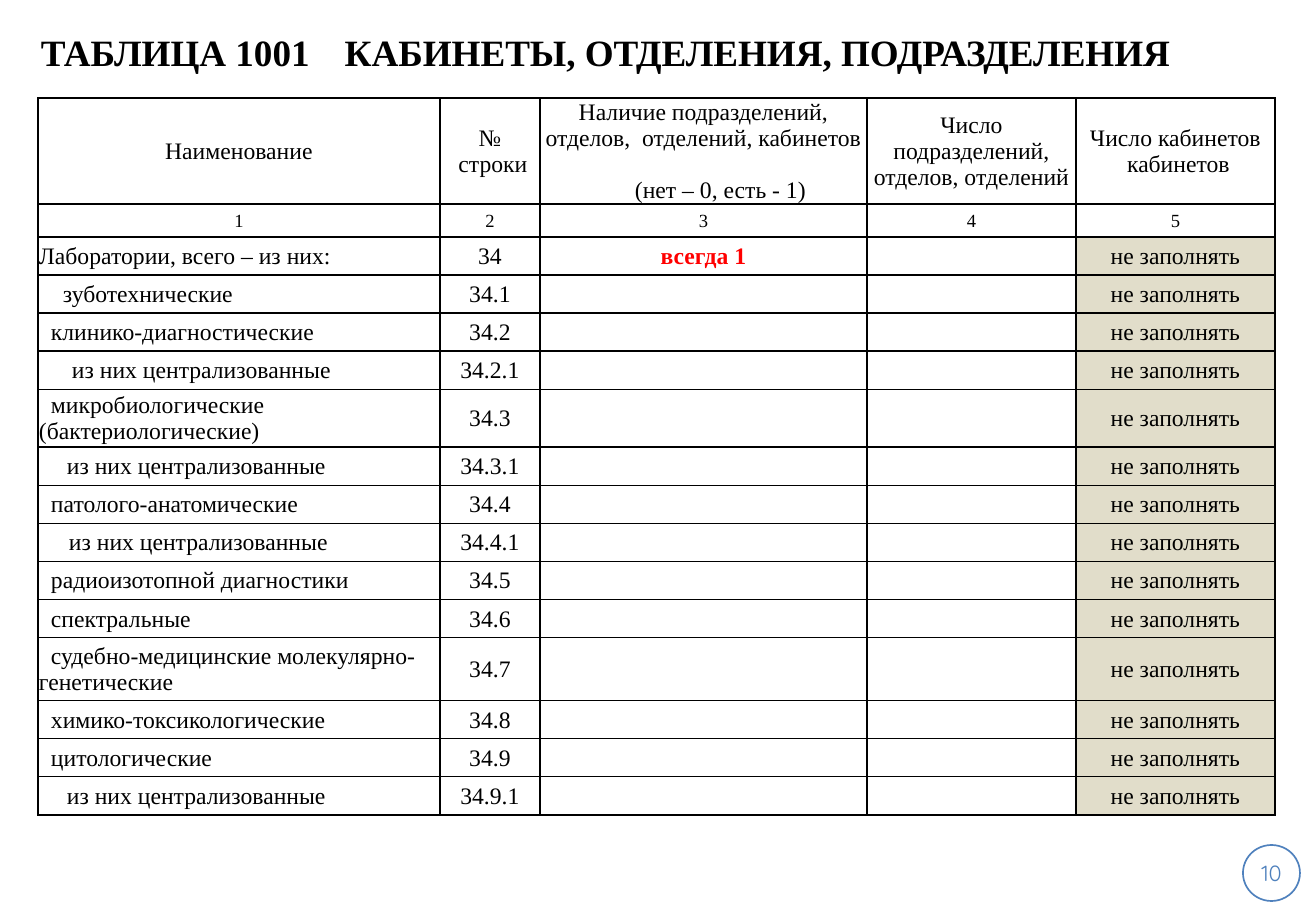
from lxml import etree
from pptx import Presentation
from pptx import util as u
from pptx.dml.color import RGBColor
from pptx.enum import shapes, text
from pptx.oxml import ns

BLACK = RGBColor(0x00, 0x00, 0x00)
RED = RGBColor(0xFF, 0x00, 0x00)
BLUE = RGBColor(0x4F, 0x81, 0xBD)
SAND = RGBColor(0xC4, 0xBD, 0x97)
SERIF, ROUND = "Times New Roman", "Quicksand"

TITLE = "ТАБЛИЦА 1001\tКАБИНЕТЫ, ОТДЕЛЕНИЯ, ПОДРАЗДЕЛЕНИЯ"
TITLE_TAB = 352
PAGE = "10"
HEADERS = [
    ("Наименование", {}),
    ("№\nстроки", {"shift": 6}),
    ("Наличие подразделений, отделов,  отделений, кабинетов\n(нет – 0, есть - 1)",
     {"shift": 34, "gap": 15.5}),
    ("Число подразделений, отделов, отделений", {}),
    ("Число кабинетов\nкабинетов", {"shift": 6}),
]
LABS = [
    ("Лаборатории, всего – из них:", 0, "34", "всегда 1"),
    ("зуботехнические", 24, "34.1", ""),
    ("клинико-диагностические", 12, "34.2", ""),
    ("из них централизованные", 33, "34.2.1", ""),
    ("микробиологические (бактериологические)", 12, "34.3", ""),
    ("из них централизованные", 28, "34.3.1", ""),
    ("патолого-анатомические", 12, "34.4", ""),
    ("из них централизованные", 30, "34.4.1", ""),
    ("радиоизотопной диагностики", 12, "34.5", ""),
    ("спектральные", 12, "34.6", ""),
    ("судебно-медицинские молекулярно-генетические", 12, "34.7", ""),
    ("химико-токсикологические", 12, "34.8", ""),
    ("цитологические", 12, "34.9", ""),
    ("из них централизованные", 28, "34.9.1", ""),
]
SKIP = "не заполнять"
COLUMNS = [402, 100, 327, 209, 199]
HEADER_HEIGHT, NUMBER_HEIGHT, LAB_HEIGHT = 106, 33, 38
TALL_LABS = {"34.3": 58, "34.7": 63}
LEFT, TOP = 38, 98


def px(length):
    return u.Emu(round(length * 914400 / 121.5))


def write(frame, words, size=14, font=SERIF, color=BLACK, bold=False,
          align=text.PP_ALIGN.CENTER, indent=0, shift=0, gap=0, tab=0):
    frame.word_wrap = True
    lines = words.split("\n")
    for number, line in enumerate(lines):
        paragraph = frame.paragraphs[0] if number == 0 else frame.add_paragraph()
        paragraph.alignment = align
        props = paragraph._p.get_or_add_pPr()
        props.set("indent", str(px(indent)))
        if number == len(lines) - 1:
            props.set("marL", str(px(shift)))
        if number and gap:
            paragraph.space_before = u.Pt(gap)
        if tab:
            stops = etree.SubElement(props, ns.qn("a:tabLst"))
            etree.SubElement(stops, ns.qn("a:tab"), pos=str(px(tab)), algn="l")
        run = paragraph.add_run()
        run.text = line
        run.font.size = u.Pt(size)
        run.font.name = font
        run.font.bold = bold
        run.font.color.rgb = color


def style_cell(cell, shaded):
    cell.margin_left = cell.margin_top = cell.margin_right = px(1)
    cell.margin_bottom = 0
    cell.vertical_anchor = text.MSO_ANCHOR.MIDDLE
    props = cell._tc.get_or_add_tcPr()
    if shaded:
        cell.fill.solid()
        cell.fill.fore_color.rgb = SAND
        tint = props.find(".//" + ns.qn("a:srgbClr"))
        etree.SubElement(tint, ns.qn("a:alpha"), val="50000")
    else:
        cell.fill.background()
    for place, side in enumerate(("lnL", "lnR", "lnT", "lnB")):
        edge = etree.Element(ns.qn("a:" + side), w=str(u.Pt(1)))
        fill = etree.SubElement(edge, ns.qn("a:solidFill"))
        etree.SubElement(fill, ns.qn("a:srgbClr"), val=str(BLACK))
        props.insert(place, edge)


def add_title(slide):
    title = slide.shapes.title
    title.left, title.top, title.width, title.height = map(px, (41, 0, 1249, 104))
    frame = title.text_frame
    frame.auto_size = text.MSO_AUTO_SIZE.NONE
    frame.vertical_anchor = text.MSO_ANCHOR.MIDDLE
    frame.margin_left = 0
    write(frame, TITLE, size=22, bold=True, align=text.PP_ALIGN.LEFT, tab=TITLE_TAB)


def add_labs(slide):
    rows = [HEADERS, [(str(n + 1), {"size": 11}) for n in range(len(COLUMNS))]]
    heights = [HEADER_HEIGHT, NUMBER_HEIGHT]
    for name, indent, code, presence in LABS:
        rows.append([(name, {"align": text.PP_ALIGN.LEFT, "indent": indent}), (code, {}),
                     (presence, {"color": RED, "bold": True}), ("", {}), (SKIP, {})])
        heights.append(TALL_LABS.get(code, LAB_HEIGHT))
    table = slide.shapes.add_table(len(rows), len(COLUMNS), px(LEFT), px(TOP),
                                   px(sum(COLUMNS)), px(sum(heights))).table
    table.first_row = table.horz_banding = False
    for column, width in zip(table.columns, COLUMNS):
        column.width = px(width)
    for r, (row, height) in enumerate(zip(rows, heights)):
        table.rows[r].height = px(height)
        for c, (words, options) in enumerate(row):
            cell = table.cell(r, c)
            style_cell(cell, words == SKIP)
            if words:
                write(cell.text_frame, words, **options)


def add_page_number(slide):
    badge = slide.shapes.add_shape(shapes.MSO_SHAPE.OVAL, *map(px, (1243, 845, 57, 56)))
    badge.shadow.inherit = False
    badge.fill.background()
    badge.line.color.rgb = BLUE
    badge.line.width = u.Pt(1)
    frame = badge.text_frame
    frame.margin_left = frame.margin_right = frame.margin_top = frame.margin_bottom = 0
    frame.vertical_anchor = text.MSO_ANCHOR.MIDDLE
    write(frame, PAGE, size=13, font=ROUND, color=BLUE)


def main():
    deck = Presentation()
    deck.slide_width, deck.slide_height = px(1316), px(911)
    slide = deck.slides.add_slide(deck.slide_layouts[5])
    add_page_number(slide)
    add_title(slide)
    add_labs(slide)
    deck.save("out.pptx")


if __name__ == "__main__":
    main()
